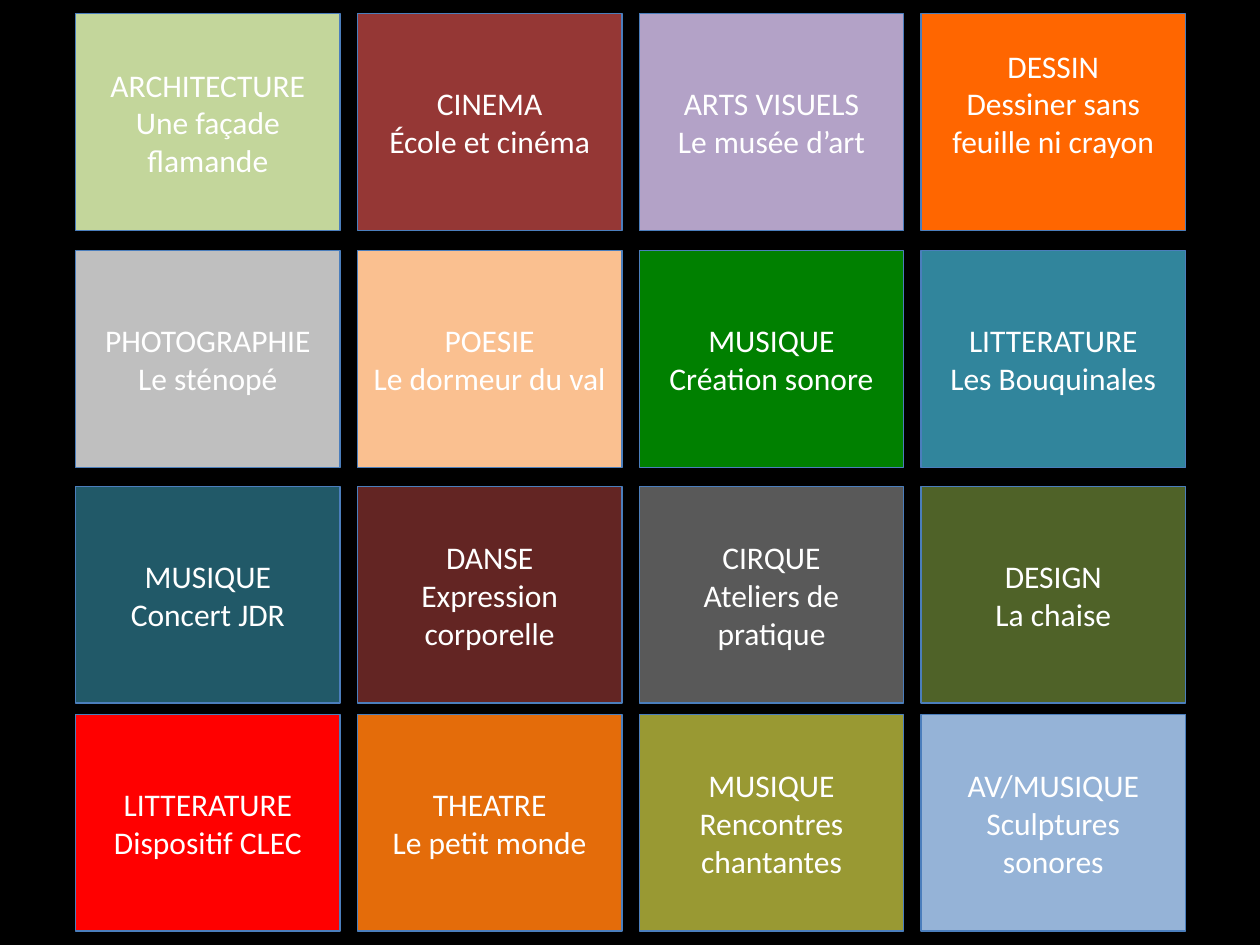
from pptx import Presentation
from pptx.dml.color import RGBColor
from pptx.enum.shapes import MSO_SHAPE as Shape
from pptx.enum.text import MSO_ANCHOR as Anchor, PP_ALIGN as Align
from pptx.util import Inches, Pt

BLACK = RGBColor(0x00, 0x00, 0x00)
WHITE = RGBColor(0xFF, 0xFF, 0xFF)
OUTLINE = RGBColor(0x4B, 0x7E, 0xBC)
LIGHT_GREEN = RGBColor(0xC3, 0xD6, 0x9B)
BRICK = RGBColor(0x95, 0x37, 0x35)
LILAC = RGBColor(0xB3, 0xA2, 0xC7)
ORANGE = RGBColor(0xFF, 0x66, 0x00)
SILVER = RGBColor(0xBF, 0xBF, 0xBF)
PEACH = RGBColor(0xFA, 0xC0, 0x90)
GREEN = RGBColor(0x00, 0x80, 0x00)
TEAL = RGBColor(0x31, 0x85, 0x9C)
DARK_TEAL = RGBColor(0x21, 0x59, 0x68)
MAROON = RGBColor(0x63, 0x25, 0x23)
GREY = RGBColor(0x59, 0x59, 0x59)
DARK_OLIVE = RGBColor(0x4F, 0x62, 0x28)
RED = RGBColor(0xFF, 0x00, 0x00)
AMBER = RGBColor(0xE4, 0x6C, 0x0A)
OLIVE = RGBColor(0x99, 0x99, 0x33)
SKY = RGBColor(0x95, 0xB3, 0xD7)

TILE_WIDTH, TILE_HEIGHT = Inches(2.1), Inches(1.72)
# The gaps between rows differ slightly, so each row has its own top
ROWS = [
    (Inches(0.11), [
        ("ARCHITECTURE", "Une façade flamande", LIGHT_GREEN),
        ("CINEMA", "École et cinéma", BRICK),
        ("ARTS VISUELS", "Le musée d’art", LILAC),
        ("DESSIN", "Dessiner sans feuille ni crayon", ORANGE),
    ]),
    (Inches(1.99), [
        ("PHOTOGRAPHIE", "Le sténopé", SILVER),
        ("POESIE", "Le dormeur du val", PEACH),
        ("MUSIQUE", "Création sonore", GREEN),
        ("LITTERATURE", "Les Bouquinales", TEAL),
    ]),
    (Inches(3.86), [
        ("MUSIQUE", "Concert JDR", DARK_TEAL),
        ("DANSE", "Expression corporelle", MAROON),
        ("CIRQUE", "Ateliers de pratique", GREY),
        ("DESIGN", "La chaise", DARK_OLIVE),
    ]),
    (Inches(5.67), [
        ("LITTERATURE", "Dispositif CLEC", RED),
        ("THEATRE", "Le petit monde", AMBER),
        ("MUSIQUE", "Rencontres chantantes", OLIVE),
        ("AV/MUSIQUE", "Sculptures sonores", SKY),
    ]),
]


def add_tile(slide, left, top, width, height, lines, color):
    """Place one coloured tile with its centred lines of text."""
    tile = slide.shapes.add_shape(Shape.RECTANGLE, left, top, width, height)
    tile.shadow.inherit = False
    tile.fill.solid()
    tile.fill.fore_color.rgb = color
    tile.line.color.rgb = OUTLINE
    tile.line.width = Pt(0.75)

    frame = tile.text_frame
    frame.word_wrap = True
    frame.vertical_anchor = Anchor.MIDDLE
    for index, line in enumerate(lines):
        paragraph = frame.add_paragraph() if index else frame.paragraphs[0]
        paragraph.alignment = Align.CENTER
        run = paragraph.add_run()
        run.text = line
        run.font.name = "Calibri"
        run.font.size = Pt(18)
        run.font.color.rgb = WHITE
    return tile


def add_row(slide, left, top, width, height, entries):
    """Spread one row of tiles evenly over the given width."""
    step = (width - TILE_WIDTH) / (len(entries) - 1)
    for column, (subject, project, color) in enumerate(entries):
        tile = add_tile(slide, round(left + column * step), top,
                        TILE_WIDTH, height, (subject, project), color)
        if subject == "DESSIN":
            # This text sits half a line above the middle
            tile.text_frame.margin_bottom = Inches(0.35)


def main():
    presentation = Presentation()
    presentation.slide_width = Inches(10)
    presentation.slide_height = Inches(7.5)
    slide = presentation.slides.add_slide(presentation.slide_layouts[6])

    # Background
    slide.background.fill.solid()
    slide.background.fill.fore_color.rgb = BLACK

    # Grid of projects
    for top, entries in ROWS:
        add_row(slide, Inches(0.6), top, Inches(8.81), TILE_HEIGHT, entries)

    presentation.save("out.pptx")


if __name__ == "__main__":
    main()
